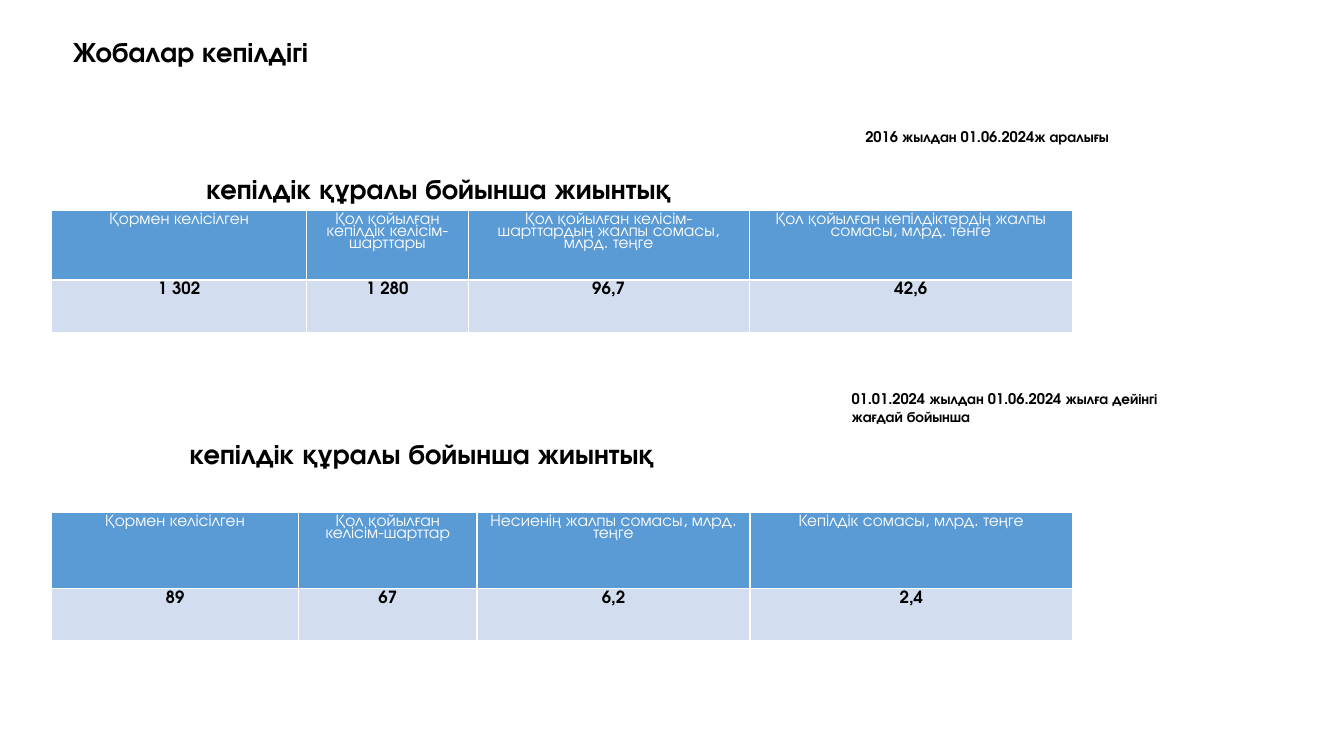
import pptx
import pptx.dml.color
import pptx.enum.text
import pptx.oxml.ns
import pptx.util
import lxml.etree

Pt = pptx.util.Pt
COLORS = {"text": "000000", "white": "FFFFFF", "header": "5B9BD5", "values": "D2DEEF"}


class GuaranteeSlide:
    """Draws the headings, captions and summary tables of one slide."""

    font_name = "TeX Gyre Adventor"
    table_left = 36.8

    def __init__(self, presentation):
        self.slide = presentation.slides.add_slide(presentation.slide_layouts[6])

    def color(self, name):
        return pptx.dml.color.RGBColor.from_string(COLORS[name])

    def style(self, paragraph, size, color, bold):
        for run in paragraph.runs:
            run.font.name = self.font_name
            run.font.size = Pt(size)
            run.font.bold = bold
            run.font.color.rgb = self.color(color)

    def text(self, words, left, top, width, height, size):
        shape = self.slide.shapes.add_textbox(Pt(left), Pt(top), Pt(width), Pt(height))
        shape.text_frame.word_wrap = True
        shape.text_frame.text = words
        self.style(shape.text_frame.paragraphs[0], size, "text", True)

    def heading(self, words, left, top, width):
        self.text(words, left, top, width, 31.5, 20)

    def caption(self, words, left, top, width, height):
        self.text(words, left, top, width, height, 10.5)

    def border(self, cell):
        properties = cell._tc.get_or_add_tcPr()
        for side in ("lnL", "lnR", "lnT", "lnB"):
            line = lxml.etree.SubElement(properties, pptx.oxml.ns.qn(f"a:{side}"), w=str(Pt(1)))
            fill = lxml.etree.SubElement(line, pptx.oxml.ns.qn("a:solidFill"))
            lxml.etree.SubElement(fill, pptx.oxml.ns.qn("a:srgbClr"), val=COLORS["white"])

    def cell(self, cell, words, fill, color, bold):
        self.border(cell)
        cell.fill.solid()
        cell.fill.fore_color.rgb = self.color(fill)
        cell.text_frame.text = words
        paragraph = cell.text_frame.paragraphs[0]
        paragraph.alignment = pptx.enum.text.PP_ALIGN.CENTER
        paragraph.line_spacing = 0.76
        self.style(paragraph, 12, color, bold)

    def table(self, top, widths, heights, headers, values):
        frame = self.slide.shapes.add_table(
            2, len(widths), Pt(self.table_left), Pt(top), Pt(sum(widths)), Pt(sum(heights)))
        table = frame.table
        for row, height in zip(table.rows, heights):
            row.height = Pt(height)
        for index, width in enumerate(widths):
            table.columns[index].width = Pt(width)
            self.cell(table.cell(0, index), headers[index], "header", "white", False)
            self.cell(table.cell(1, index), values[index], "values", "text", True)


def main():
    presentation = pptx.Presentation()
    presentation.slide_width = Pt(960)
    presentation.slide_height = Pt(540)
    slide = GuaranteeSlide(presentation)
    summary = "кепілдік құралы бойынша жиынтық"

    slide.heading("Жобалар кепілдігі", 44.8, 21, 345)
    slide.caption("2016 жылдан 01.06.2024ж аралығы", 611, 88, 227, 20)
    slide.heading(summary, 140.4, 118.6, 376.6)
    slide.table(
        150, (182.3, 115.3, 200.8, 231), (50, 37.4),
        ("Қормен келісілген",
         "Қол қойылған кепілдік келісім-шарттары",
         "Қол қойылған келісім-шарттардың жалпы сомасы, млрд. теңге",
         "Қол қойылған кепілдіктердің жалпы сомасы, млрд. тенге"),
        ("1 302", "1 280", "96,7", "42,6"))

    slide.caption("01.01.2024 жылдан 01.06.2024 жылға дейінгі жағдай бойынша", 601.2, 275, 244, 32.5)
    slide.heading(summary, 128.4, 308.2, 485)
    slide.table(
        366, (176.4, 127.6, 195, 230.4), (54.4, 37.4),
        ("Қормен келісілген",
         "Қол қойылған келісім-шарттар",
         "Несиенің жалпы сомасы, млрд. теңге",
         "Кепілдік сомасы, млрд. теңге"),
        ("89", "67", "6,2", "2,4"))

    presentation.save("out.pptx")


if __name__ == "__main__":
    main()
